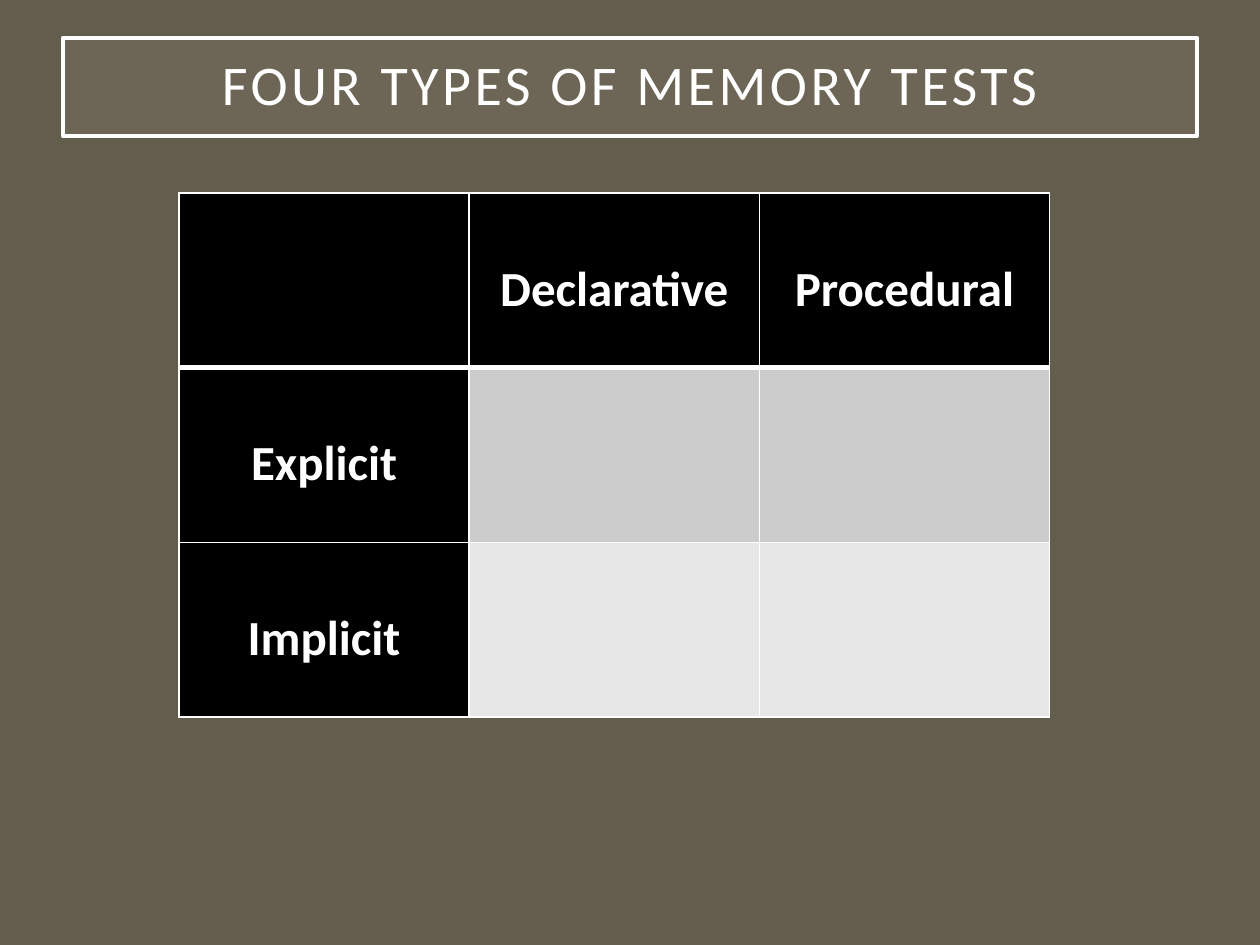
from lxml.etree import SubElement
from pptx import Presentation
from pptx.dml.color import RGBColor
from pptx.enum.shapes import MSO_SHAPE
from pptx.enum.text import MSO_ANCHOR, PP_ALIGN
from pptx.oxml import parse_xml
from pptx.oxml.ns import nsdecls, qn
from pptx.util import Inches, Pt

COLORS = {
    "background": "635D4D",
    "title": "A7A08E",
    "white": "FFFFFF",
    "header": "000000",
    "explicit": "CCCCCC",
    "implicit": "E7E7E7",
}
TITLE_FORMAT = {"name": "Calibri", "size": Pt(32), "bold": False}
HEADER_FORMAT = {"name": "Calibri", "size": Pt(28), "bold": True}

MEMORY_TESTS = [
    ["", "Declarative", "Procedural"],
    ["Explicit", "", ""],
    ["Implicit", "", ""],
]
ROW_COLORS = ["header", "explicit", "implicit"]


class SlideBuilder:
    def __init__(self, presentation):
        self.width = presentation.slide_width
        self.height = presentation.slide_height
        self.slide = presentation.slides.add_slide(presentation.slide_layouts[6])
        self.paint(self.slide.background.fill, "background")

    def paint(self, fill, color):
        fill.solid()
        fill.fore_color.rgb = RGBColor.from_string(COLORS[color])

    def box(self, left, top, width, height):
        """Turn shares of the slide's size into lengths."""
        return (int(left * self.width), int(top * self.height),
                int(width * self.width), int(height * self.height))

    def add_label(self, frame, text, text_format):
        paragraph = frame.paragraphs[0]
        paragraph.alignment = PP_ALIGN.CENTER
        run = paragraph.add_run()
        run.text = text
        for attribute, value in text_format.items():
            setattr(run.font, attribute, value)
        run.font.color.rgb = RGBColor.from_string(COLORS["white"])
        return paragraph, run

    def title(self, text, area, opacity, spacing):
        banner = self.slide.shapes.add_shape(MSO_SHAPE.RECTANGLE, *self.box(*area))
        banner.shadow.inherit = False
        self.paint(banner.fill, "title")
        tint = banner.fill._xPr.find(qn("a:solidFill"))[0]
        SubElement(tint, qn("a:alpha"), val=str(opacity * 1000))
        self.paint(banner.line.fill, "white")
        banner.line.width = Pt(2.5)

        frame = banner.text_frame
        frame.word_wrap = True
        frame.vertical_anchor = MSO_ANCHOR.MIDDLE
        for side in ("left", "top", "right", "bottom"):
            setattr(frame, f"margin_{side}", Inches(0.2))
        paragraph, run = self.add_label(frame, text, TITLE_FORMAT)
        paragraph.line_spacing = 0.9
        run.font._element.set("spc", str(spacing * 100))

    def borders(self, cell, widths):
        """Draw white cell edges, given in points by edge letter."""
        properties = cell._tc.get_or_add_tcPr()
        for position, (edge, width) in enumerate(widths.items()):
            properties.insert(position, parse_xml(
                f'<a:ln{edge} {nsdecls("a")} w="{Pt(width)}"><a:solidFill>'
                f'<a:srgbClr val="{COLORS["white"]}"/></a:solidFill></a:ln{edge}>'))

    def table(self, content, area):
        rows, columns = len(content), len(content[0])
        grid = self.slide.shapes.add_table(rows, columns, *self.box(*area)).table
        for r, labels in enumerate(content):
            for c, label in enumerate(labels):
                cell = grid.cell(r, c)
                self.paint(cell.fill, "header" if c == 0 else ROW_COLORS[r])
                self.borders(cell, {"L": 1, "R": 1, "T": 3 if r == 1 else 1,
                                    "B": 3 if r == 0 else 1})
                if label:
                    cell.margin_top = Inches(0.53)
                    self.add_label(cell.text_frame, label, HEADER_FORMAT)


def main():
    presentation = Presentation()
    presentation.slide_width, presentation.slide_height = Inches(10), Inches(7.5)
    builder = SlideBuilder(presentation)
    builder.title("FOUR TYPES OF MEMORY TESTS", (0.05, 0.04, 0.9, 0.104),
                  opacity=15, spacing=2)
    builder.table(MEMORY_TESTS, (0.142, 0.204, 0.691, 0.555))
    presentation.save("out.pptx")


if __name__ == "__main__":
    main()
